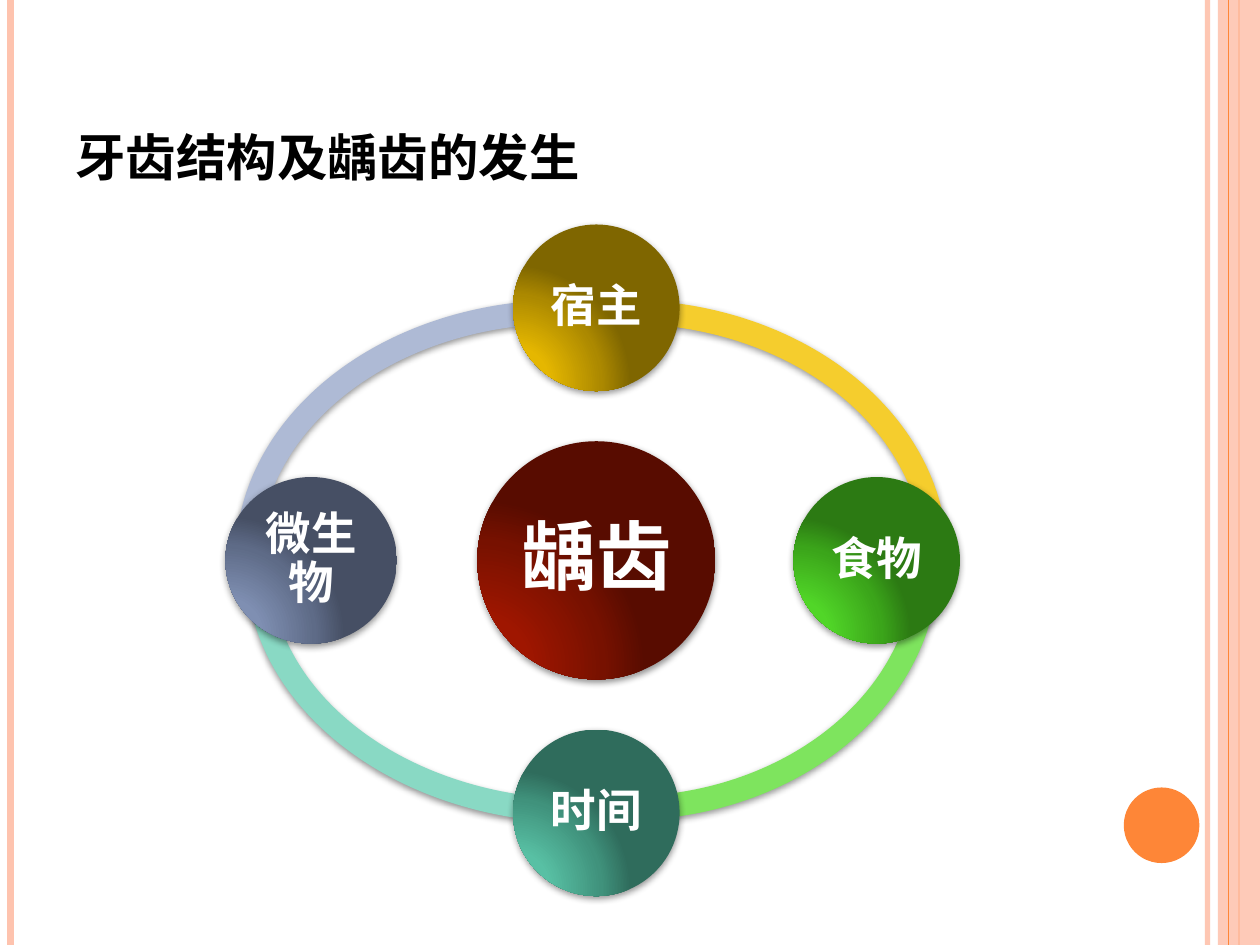
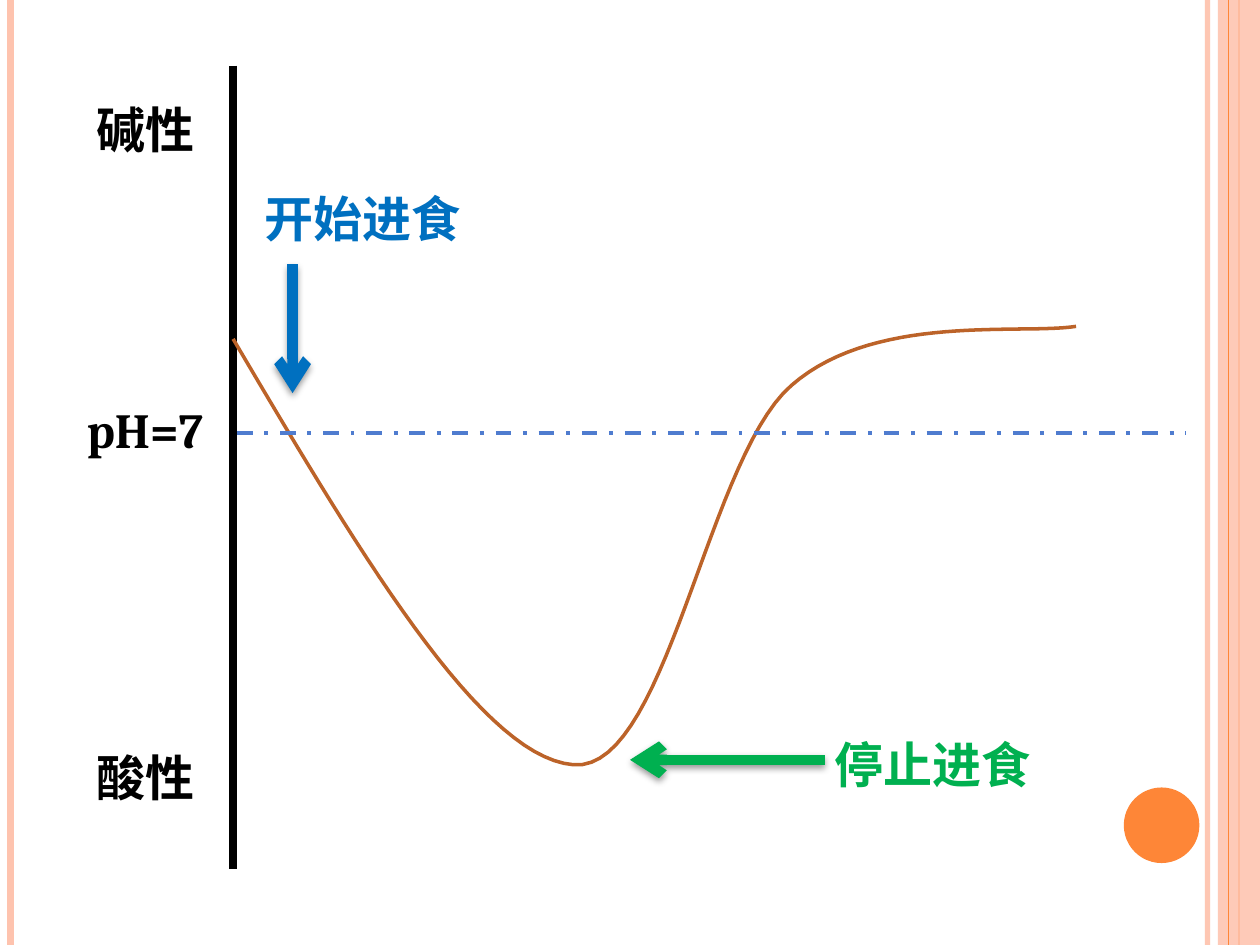
from dataclasses import dataclass

from lxml import etree
from pptx import Presentation
from pptx.dml.color import RGBColor
from pptx.enum.dml import MSO_LINE
from pptx.enum.shapes import MSO_CONNECTOR, MSO_SHAPE
from pptx.enum.text import MSO_ANCHOR, PP_ALIGN
from pptx.oxml.ns import qn
from pptx.util import Pt

LINE = MSO_CONNECTOR.STRAIGHT
OVAL, RECT, ARC = MSO_SHAPE.OVAL, MSO_SHAPE.RECTANGLE, MSO_SHAPE.BLOCK_ARC
TOP, MIDDLE, BOTTOM = MSO_ANCHOR.TOP, MSO_ANCHOR.MIDDLE, MSO_ANCHOR.BOTTOM
LEFT, CENTER = PP_ALIGN.LEFT, PP_ALIGN.CENTER
DASH_DOT = MSO_LINE.DASH_DOT


@dataclass(frozen=True)
class Theme:
    latin: str = "Cambria"
    asian: str = "Noto Sans CJK SC"
    black: str = "000000"
    white: str = "FFFFFF"
    peach: str = "FEC3AE"
    orange: str = "FE8637"
    blue: str = "0070C0"
    green: str = "00B050"
    curve: str = "BC6329"
    level: str = "4F7CCF"
    red_ball: tuple = ("A41700", "9F1600", "771100", "580C00")
    gold_ball: tuple = ("EDBE00", "E5B700", "AC8900", "7F6600")
    lime_ball: tuple = ("54DE2A", "51D628", "3BA51A", "2C7A13")
    teal_ball: tuple = ("5BC7AA", "58C0A4", "40927C", "2F6C5C")
    slate_ball: tuple = ("8494B9", "7F8FB2", "5E6B87", "464F64")
    gold_arc: str = "F5CD2D"
    lime_arc: str = "7EE45E"
    teal_arc: str = "89D9C4"
    slate_arc: str = "AEBAD5"
    title: int = 36
    label: int = 28
    core: int = 43
    node: int = 26


T = Theme()
WIDTH, HEIGHT = 720, 540


def child(parent, tag, **attrs):
    node = etree.SubElement(parent, qn(tag))
    for key, value in attrs.items():
        node.set(key, str(value))
    return node


def fade(holder, percent):
    """Set the opacity of the first colour inside an XML element."""
    color = next(holder.iter(qn("a:srgbClr")))
    child(color, "a:alpha", val=percent * 1000)


def drop(effects, alpha, gap):
    """Put a downward shadow into an effect list."""
    outer = child(effects, "a:outerShdw", blurRad=Pt(4), dist=Pt(gap),
                  dir=90 * 60000, rotWithShape=0)
    color = child(outer, "a:srgbClr", val=T.black)
    child(color, "a:alpha", val=alpha * 1000)


def add_line(slide, x1, y1, x2, y2, color, width, dash=None, alpha=None, arrow=False):
    link = slide.shapes.add_connector(LINE, Pt(x1), Pt(y1), Pt(x2), Pt(y2))
    link.line.color.rgb = RGBColor.from_string(color)
    link.line.width = Pt(width)
    if dash:
        link.line.dash_style = dash
    props = link._element.spPr
    if alpha:
        fade(props, alpha)
    if arrow:
        child(props.find(qn("a:ln")), "a:tailEnd", type="arrow")
    effects = child(props, "a:effectLst")
    if arrow:
        drop(effects, 40, 2)


def add_form(slide, kind, x, y, w, h, color=None, alpha=None, shadow=False):
    form = slide.shapes.add_shape(kind, Pt(x), Pt(y), Pt(w), Pt(h))
    form.line.fill.background()
    form.shadow.inherit = False
    props = form._element.spPr
    if color:
        form.fill.solid()
        form.fill.fore_color.rgb = RGBColor.from_string(color)
    if alpha:
        fade(props, alpha)
    if shadow:
        drop(props.find(qn("a:effectLst")), 42, 1.6)
    return form


def write(frame, text, size, color, face=T.latin, anchor=TOP, align=LEFT):
    frame.word_wrap = True
    frame.vertical_anchor = anchor
    para = frame.paragraphs[0]
    para.alignment = align
    run = para.add_run()
    run.text = text
    run.font.size = Pt(size)
    run.font.bold = True
    run.font.color.rgb = RGBColor.from_string(color)
    run.font.name = face
    child(run._r.rPr, "a:ea", typeface=T.asian)
    return run


def add_text(slide, text, x, y, w, h, size, color=T.black, **style):
    box = slide.shapes.add_textbox(Pt(x), Pt(y), Pt(w), Pt(h))
    return write(box.text_frame, text, size, color, **style)


def add_ball(slide, text, cx, cy, w, h, stops, size, inset):
    """Add a shaded circle, lit from the lower left, with text inside."""
    ball = add_form(slide, OVAL, cx - w / 2, cy - h / 2, w, h, shadow=True)
    props = ball._element.spPr
    grad = child(props, "a:gradFill", rotWithShape=1)
    stop_list = child(grad, "a:gsLst")
    for place, color in zip((0, 30, 75, 100), stops):
        stop = child(stop_list, "a:gs", pos=place * 1000)
        child(stop, "a:srgbClr", val=color)
    shade = child(grad, "a:path", path="circle")
    child(shade, "a:fillToRect", l=5000, t=100000, r=120000, b=10000)
    props.find(qn("a:prstGeom")).addnext(grad)

    frame = ball.text_frame
    frame.margin_left = frame.margin_right = Pt(inset)
    frame.margin_top = frame.margin_bottom = Pt(inset)
    write(frame, text, size, T.white, anchor=MIDDLE, align=CENTER)
    frame.paragraphs[0].line_spacing = 0.9


def add_arc(slide, x, y, w, start, end, color):
    """Add a ring part that runs clockwise between two angles in degrees."""
    arc = add_form(slide, ARC, x, y, w, 295.2, color, shadow=True)
    for index, angle in enumerate((start, end)):
        arc.adjustments[index] = angle * 0.6
    arc.adjustments[2] = 0.046


def add_curve(slide, start, bends, color, width, steps=30):
    """Draw a chain of cubic curves, each given by two handles and an end."""
    points, first = [], start
    for second, third, last in bends:
        for step in range(1, steps + 1):
            t = step / steps
            u = 1 - t
            points.append(tuple(
                Pt(u**3 * a + 3 * u * u * t * b + 3 * u * t * t * c + t**3 * d)
                for a, b, c, d in zip(first, second, third, last)))
        first = last
    pen = slide.shapes.build_freeform(Pt(start[0]), Pt(start[1]))
    pen.add_line_segments(points, close=False)
    curve = pen.convert_to_shape()
    curve.fill.background()
    curve.line.color.rgb = RGBColor.from_string(color)
    curve.line.width = Pt(width)
    curve.shadow.inherit = False


def add_base(deck):
    """Add a blank slide with the side bands and the dot."""
    slide = deck.slides.add_slide(deck.slide_layouts[6])

    def band(x, color, width, alpha=None):
        add_line(slide, x, 0, x, HEIGHT, color, width, alpha=alpha)

    band(690, T.peach, 3, 93)
    band(6, T.peach, 4.5)
    band(708, T.orange, 1.5)
    add_form(slide, RECT, 696, 0, 24, HEIGHT, T.peach, 87)
    band(702, T.orange, 0.75)
    add_form(slide, OVAL, 642.2, 450, 43.2, 43.2, T.orange)
    return slide


def draw_cause(deck):
    slide = add_base(deck)
    title = add_text(slide, "牙齿结构及龋齿的发生", 36, 21.6, 588, 90,
                     T.title, anchor=BOTTOM)
    title._r.rPr.set("cap", "small")

    for arc in (
        (134.6, 171.4, 375.1, 179.52, 277.44, T.slate_arc),
        (140.4, 175, 383, 82.56, 180.48, T.teal_arc),
        (177.8, 173.5, 358.6, 359.66, 96.29, T.lime_arc),
        (172.1, 171.4, 369.4, 263.71, 0.35, T.gold_arc),
    ):
        add_arc(slide, *arc)

    cx, cy, rise = 340.8, 320.2, 144.3
    add_ball(slide, "龋齿", cx, cy, 136.1, 136.1, T.red_ball, T.core, 4)
    for text, dx, dy, width, stops in (
        ("宿主", 0, -rise, 95.2, T.gold_ball),
        ("食物", 160.2, 0, 95.2, T.lime_ball),
        ("时间", 0, rise, 95.2, T.teal_ball),
        ("微生物", -163, 0, 98, T.slate_ball),
    ):
        add_ball(slide, text, cx + dx, cy + dy, width, 95.2, stops, T.node, 3)


def draw_acid(deck):
    slide = add_base(deck)
    add_line(slide, 133.2, 37.5, 133.2, 496.8, T.black, 4.5)
    add_curve(slide, (133.2, 193.7), (
        ((203.8, 313.2), (274.3, 432.7), (327.6, 437)),
        ((380.9, 442), (403.9, 262), (452.2, 220.3)),
        ((499.7, 178.6), (583.9, 191.5), (614.9, 186.5)),
    ), T.curve, 2)
    add_line(slide, 135.4, 247.7, 677.5, 247.7, T.level, 2.25, dash=DASH_DOT)

    for text, x, y in (("pH=7", 42.5, 224.6), ("碱性", 48.2, 53.3),
                       ("酸性", 48.2, 423.4)):
        add_text(slide, text, x, y, 118.8, 41, T.label)

    add_line(slide, 167.2, 151, 167.2, 224.6, T.blue, 6, arrow=True)
    add_text(slide, "开始进食", 144, 104.4, 153.4, 41, T.label, T.blue, face=T.asian)
    add_line(slide, 471.2, 434.2, 360, 434.2, T.green, 6, arrow=True)
    add_text(slide, "停止进食", 469.8, 416.2, 139, 41, T.label, T.green, face=T.asian)


def main():
    deck = Presentation()
    deck.slide_width, deck.slide_height = Pt(WIDTH), Pt(HEIGHT)
    draw_cause(deck)
    draw_acid(deck)
    deck.save("out.pptx")


if __name__ == "__main__":
    main()
